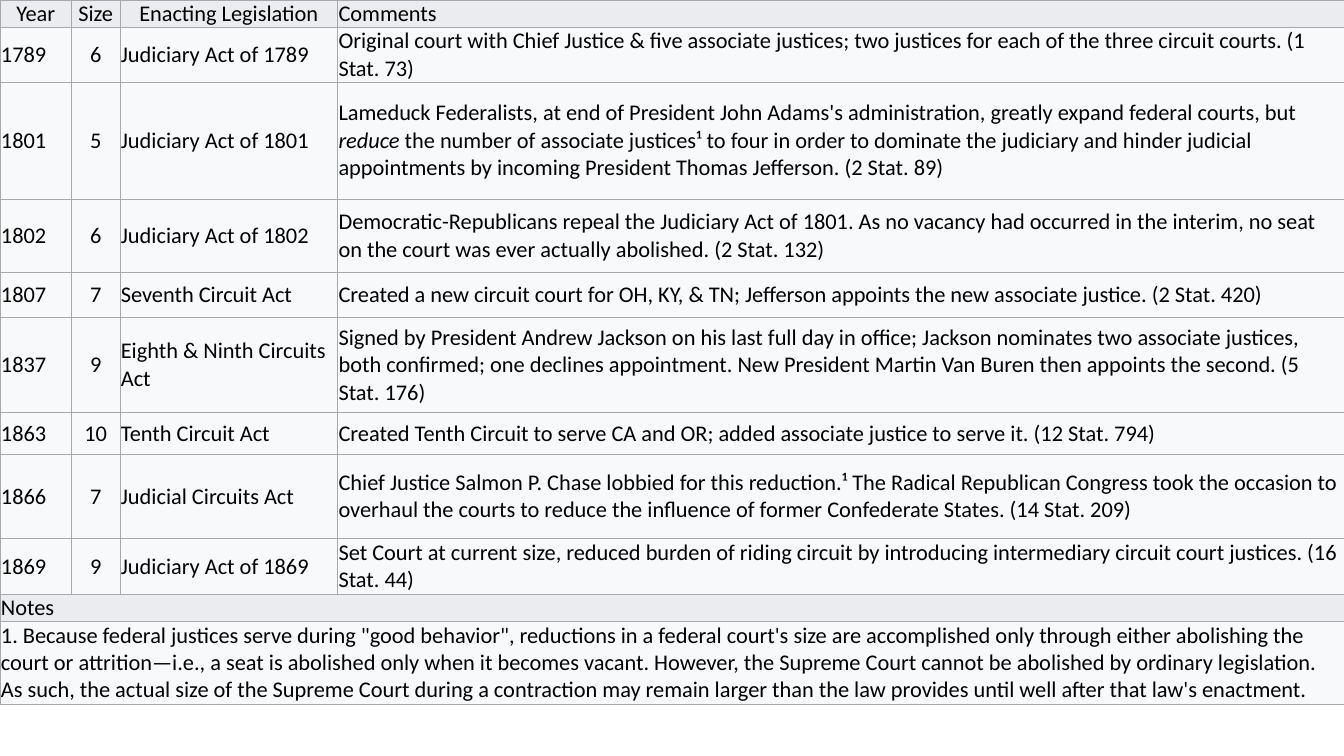
import dataclasses
import typing

import lxml.etree
import pptx
import pptx.dml.color
import pptx.enum.text
import pptx.oxml.ns
import pptx.util

Pt = pptx.util.Pt
Align = pptx.enum.text.PP_ALIGN

HUES = {"head": "EAECF0", "body": "F8F9FA", "edge": "A2A9B1", "text": "000000"}
WIDTHS = (51.1, 34.6, 155.5, 718.8)
EDGE = 0.6
INSET = 0.7
HEIGHT = 503.3


@dataclasses.dataclass(frozen=True)
class Row:
    """One table row; a single text spans all columns, *stars* mark italics."""
    height: float
    texts: typing.Tuple[str, ...]
    hue: str = "body"


ROWS = (
    Row(11.5, ("Year", "Size", "Enacting Legislation", "Comments"), "head"),
    Row(37.4, ("1789", "6", "Judiciary Act of 1789",
               "Original court with Chief Justice & five associate justices; two justices "
               "for each of the three circuit courts. (1 Stat. 73)")),
    Row(83.5, ("1801", "5", "Judiciary Act of 1801",
               "Lameduck Federalists, at end of President John Adams's administration, "
               "greatly expand federal courts, but *reduce* the number of associate "
               "justices¹ to four in order to dominate the judiciary and hinder judicial "
               "appointments by incoming President Thomas Jefferson. (2 Stat. 89)")),
    Row(52.6, ("1802", "6", "Judiciary Act of 1802",
               "Democratic-Republicans repeal the Judiciary Act of 1801. As no vacancy had "
               "occurred in the interim, no seat on the court was ever actually abolished. "
               "(2 Stat. 132)")),
    Row(31.7, ("1807", "7", "Seventh Circuit Act",
               "Created a new circuit court for OH, KY, & TN; Jefferson appoints the new "
               "associate justice. (2 Stat. 420)")),
    Row(68.4, ("1837", "9", "Eighth & Ninth Circuits Act",
               "Signed by President Andrew Jackson on his last full day in office; Jackson "
               "nominates two associate justices, both confirmed; one declines appointment. "
               "New President Martin Van Buren then appoints the second. (5 Stat. 176)")),
    Row(29.5, ("1863", "10", "Tenth Circuit Act",
               "Created Tenth Circuit to serve CA and OR; added associate justice to serve "
               "it. (12 Stat. 794)")),
    Row(60.5, ("1866", "7", "Judicial Circuits Act",
               "Chief Justice Salmon P. Chase lobbied for this reduction.¹ The Radical "
               "Republican Congress took the occasion to overhaul the courts to reduce the "
               "influence of former Confederate States. (14 Stat. 209)")),
    Row(39.6, ("1869", "9", "Judiciary Act of 1869",
               "Set Court at current size, reduced burden of riding circuit by introducing "
               "intermediary circuit court justices. (16 Stat. 44)")),
    Row(4.3, ("Notes",), "head"),
    Row(44.6, ("1. Because federal justices serve during \"good behavior\", reductions in a "
               "federal court's size are accomplished only through either abolishing the "
               "court or attrition—i.e., a seat is abolished only when it becomes vacant. "
               "However, the Supreme Court cannot be abolished by ordinary legislation. As "
               "such, the actual size of the Supreme Court during a contraction may remain "
               "larger than the law provides until well after that law's enactment.",)),
)


def tint(name: str) -> pptx.dml.color.RGBColor:
    return pptx.dml.color.RGBColor.from_string(HUES[name])


def frame(cell: typing.Any) -> None:
    """Draw the four borders of a cell; call before its fill is set."""
    name = pptx.oxml.ns.qn
    props = cell._tc.get_or_add_tcPr()
    for side in ("lnL", "lnR", "lnT", "lnB"):
        line = lxml.etree.SubElement(props, name("a:" + side), w=str(Pt(EDGE)))
        fill = lxml.etree.SubElement(line, name("a:solidFill"))
        lxml.etree.SubElement(fill, name("a:srgbClr"), val=HUES["edge"])


def style(cell: typing.Any, hue: str) -> None:
    frame(cell)
    cell.fill.solid()
    cell.fill.fore_color.rgb = tint(hue)
    cell.margin_left = cell.margin_right = Pt(INSET)
    cell.margin_top = cell.margin_bottom = Pt(0)
    cell.vertical_anchor = pptx.enum.text.MSO_ANCHOR.MIDDLE


def write(cell: typing.Any, text: str, align: typing.Any) -> None:
    para = cell.text_frame.paragraphs[0]
    para.alignment = align
    for turn, part in enumerate(text.split("*")):
        run = para.add_run()
        run.text = part
        run.font.name = "Calibri"
        run.font.size = Pt(16)
        run.font.italic = turn % 2 == 1
        run.font.color.rgb = tint("text")


def main() -> None:
    deck = pptx.Presentation()
    deck.slide_width, deck.slide_height = Pt(960), Pt(540)
    slide = deck.slides.add_slide(deck.slide_layouts[6])
    grid = slide.shapes.add_table(
        len(ROWS), len(WIDTHS), Pt(0), Pt(0), Pt(sum(WIDTHS)), Pt(HEIGHT)).table
    grid.first_row = grid.horz_banding = False
    for column, width in zip(grid.columns, WIDTHS):
        column.width = Pt(width)
    for index, row in enumerate(ROWS):
        grid.rows[index].height = Pt(row.height)
        cells = list(grid.rows[index].cells)
        for cell in cells:
            style(cell, row.hue)
        if len(row.texts) == 1:
            cells[0].merge(cells[-1])
        for place, (cell, text) in enumerate(zip(cells, row.texts)):
            middle = place == 1 or (index == 0 and place < 3)
            write(cell, text, Align.CENTER if middle else Align.LEFT)
    deck.save("out.pptx")


if __name__ == "__main__":
    main()
